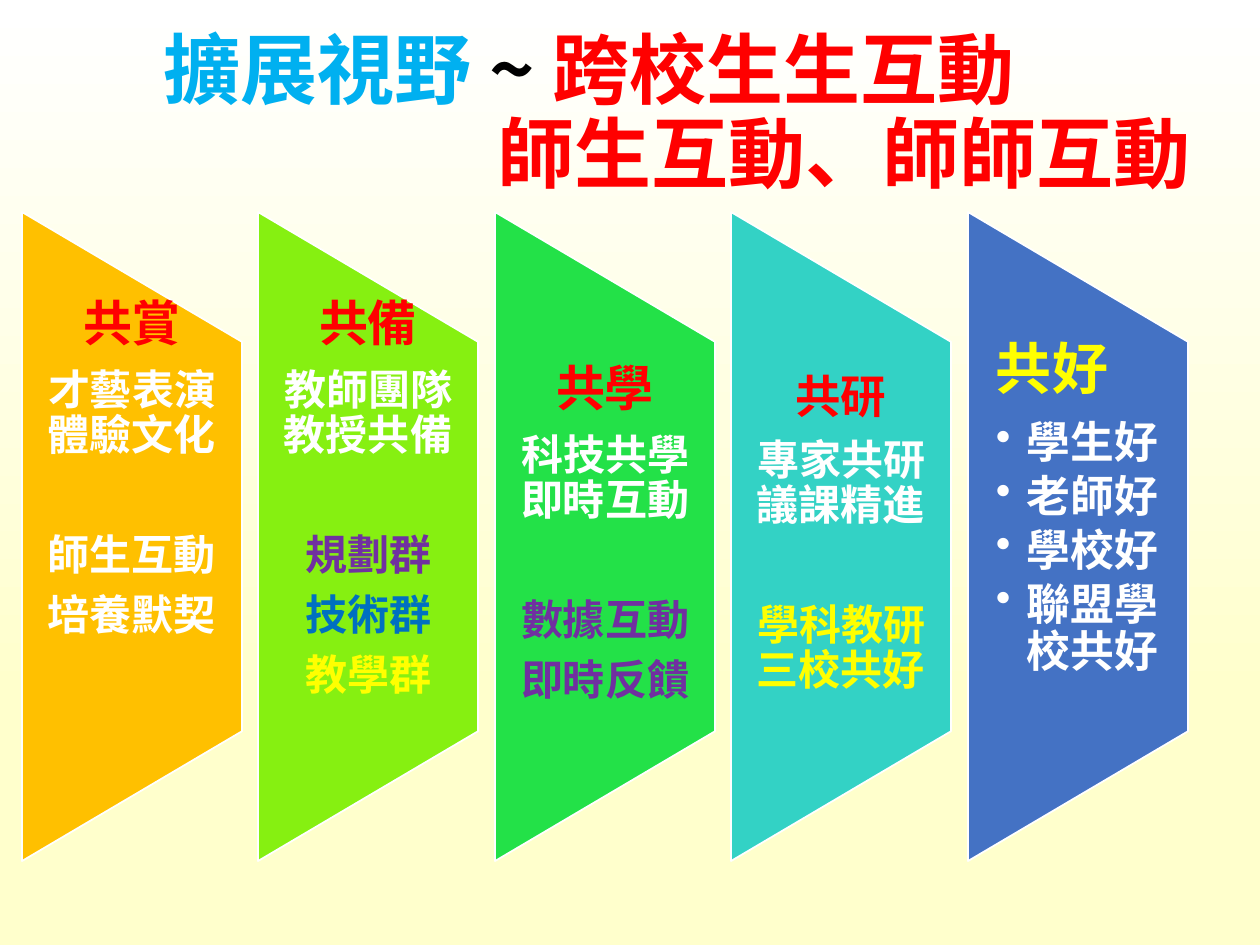
"""Build the slide of five side panels on interaction across schools."""
import dataclasses

import lxml.etree
import pptx
import pptx.dml.color
import pptx.enum.shapes
import pptx.enum.text
import pptx.oxml.ns
import pptx.util


@dataclasses.dataclass(frozen=True)
class Theme:
    title_font: str = "Noto Sans CJK SC"
    body_font: str = "Calibri"
    title_size: int = 44
    heading_size: int = 28
    small_heading_size: int = 26
    large_heading_size: int = 32
    body_size: int = 24
    bullet_size: int = 25
    line_spacing: float = 0.9
    sky: str = "00B0F0"
    black: str = "000000"
    white: str = "FFFFFF"
    cream: str = "FFFFCC"
    red: str = "FF0000"
    yellow: str = "FFFF00"
    purple: str = "7030A0"
    blue: str = "0070C0"
    orange: str = "FFC000"
    lime: str = "86F011"
    green: str = "23E148"
    teal: str = "33D2C5"
    indigo: str = "4472C4"


THEME = Theme()
PX_PER_INCH = 126
PANEL_TOP, PANEL_WIDTH, PANEL_HEIGHT = 212, 220, 649
TEXT_BOTTOM = 731
TOPIC_GAP = 42.6
BULLET_INDENT = 31


def px(length):
    return pptx.util.Emu(round(length * 914400 / PX_PER_INCH))


def rgb(colour):
    return pptx.dml.color.RGBColor.from_string(colour)


def assign(target, values):
    for name, value in values.items():
        setattr(target, name, value)


class SlideBuilder:
    def __init__(self, slide, theme):
        self.slide = slide
        self.theme = theme

    def background(self):
        fill = self.slide.background.fill
        fill.gradient()
        fill.gradient_angle = 270
        colours = (self.theme.white, self.theme.cream)
        for stop, position, colour in zip(fill.gradient_stops, (0, 0.74), colours):
            stop.position = position
            stop.color.rgb = rgb(colour)

    def panel(self, left, colour):
        shape = self.slide.shapes.add_shape(
            pptx.enum.shapes.MSO_SHAPE.FLOWCHART_MANUAL_OPERATION,
            px(left + (PANEL_WIDTH - PANEL_HEIGHT) / 2),
            px(PANEL_TOP + (PANEL_HEIGHT - PANEL_WIDTH) / 2),
            px(PANEL_HEIGHT), px(PANEL_WIDTH))
        shape.rotation = 270
        shape.shadow.inherit = False
        shape.fill.solid()
        shape.fill.fore_color.rgb = rgb(colour)
        shape.line.color.rgb = rgb(self.theme.white)
        shape.line.width = pptx.util.Pt(1)

    def text_frame(self, left, top, width, height, inset, **values):
        frame = self.slide.shapes.add_textbox(px(left), px(top), px(width), px(height)).text_frame
        assign(frame, {"word_wrap": True, "margin_left": px(inset), "margin_right": px(inset),
                       "margin_top": 0, "margin_bottom": 0} | values)
        return frame

    def paragraph(self, frame, runs, size, font, after=0, indent=0, bullet=False, centred=False):
        first = frame.paragraphs[0]
        paragraph = first if not first.runs else frame.add_paragraph()
        properties = paragraph._p.get_or_add_pPr()
        if indent:
            properties.set("marL", str(px(indent)))
        if bullet:
            properties.set("indent", str(-px(indent)))
            mark = lxml.etree.SubElement(properties, pptx.oxml.ns.qn("a:buChar"))
            mark.set("char", "•")
        align = pptx.enum.text.PP_ALIGN
        assign(paragraph, {"alignment": align.CENTER if centred else align.LEFT,
                           "line_spacing": self.theme.line_spacing,
                           "space_after": pptx.util.Pt(after)})
        for words, colour in runs:
            run = paragraph.add_run()
            run.text = words
            assign(run.font, {"name": font, "size": pptx.util.Pt(size), "bold": True})
            run.font.color.rgb = rgb(colour)

    def title(self, lines):
        frame = self.text_frame(151, 24, 1092, 183, 13,
                                vertical_anchor=pptx.enum.text.MSO_ANCHOR.MIDDLE)
        for runs, indent in lines:
            self.paragraph(frame, runs, self.theme.title_size, self.theme.title_font, indent=indent)

    def topics(self, left, top, heading, heading_size, intro, points):
        theme = self.theme
        frame = self.text_frame(left, top, PANEL_WIDTH, TEXT_BOTTOM - top, 24)
        rows = [(heading, theme.red, heading_size, heading_size * 0.35),
                (intro, theme.white, theme.body_size, TOPIC_GAP)]
        rows += [(words, colour, theme.body_size, theme.body_size * 0.35)
                 for words, colour in points]
        for words, colour, size, after in rows:
            self.paragraph(frame, [(words, colour)], size, theme.body_font, after, centred=True)

    def bullets(self, left, top, heading, points):
        theme = self.theme
        frame = self.text_frame(left, top, PANEL_WIDTH, TEXT_BOTTOM - top, 28)
        self.paragraph(frame, [(heading, theme.yellow)], theme.large_heading_size,
                       theme.body_font, theme.large_heading_size * 0.35)
        for words in points:
            self.paragraph(frame, [(words, theme.white)], theme.bullet_size, theme.body_font,
                           theme.bullet_size * 0.15, BULLET_INDENT, bullet=True)


def main():
    deck = pptx.Presentation()
    deck.slide_width, deck.slide_height = px(1260), px(945)
    builder = SlideBuilder(deck.slides.add_slide(deck.slide_layouts[6]), THEME)
    builder.background()
    builder.title([
        ([("擴展視野", THEME.sky), (" ~ ", THEME.black), ("跨校生生互動", THEME.red)], 0),
        ([("師生互動、師師互動", THEME.red)], 334),
    ])
    panel_lefts = [22 + step * 473 // 2 for step in range(5)]
    panel_colours = [THEME.orange, THEME.lime, THEME.green, THEME.teal, THEME.indigo]
    for left, colour in zip(panel_lefts, panel_colours):
        builder.panel(left, colour)
    topics = [
        (299, "共賞", THEME.heading_size, "才藝表演體驗文化",
         [("師生互動", THEME.white), ("培養默契", THEME.white)]),
        (299, "共備", THEME.heading_size, "教師團隊教授共備",
         [("規劃群", THEME.purple), ("技術群", THEME.blue), ("教學群", THEME.yellow)]),
        (364, "共學", THEME.heading_size, "科技共學即時互動",
         [("數據互動", THEME.purple), ("即時反饋", THEME.purple)]),
        (374, "共研", THEME.small_heading_size, "專家共研議課精進",
         [("學科教研三校共好", THEME.yellow)]),
    ]
    for left, topic in zip(panel_lefts, topics):
        builder.topics(left, *topic)
    builder.bullets(panel_lefts[-1], 341, "共好", ["學生好", "老師好", "學校好", "聯盟學校共好"])
    deck.save("out.pptx")


if __name__ == "__main__":
    main()
